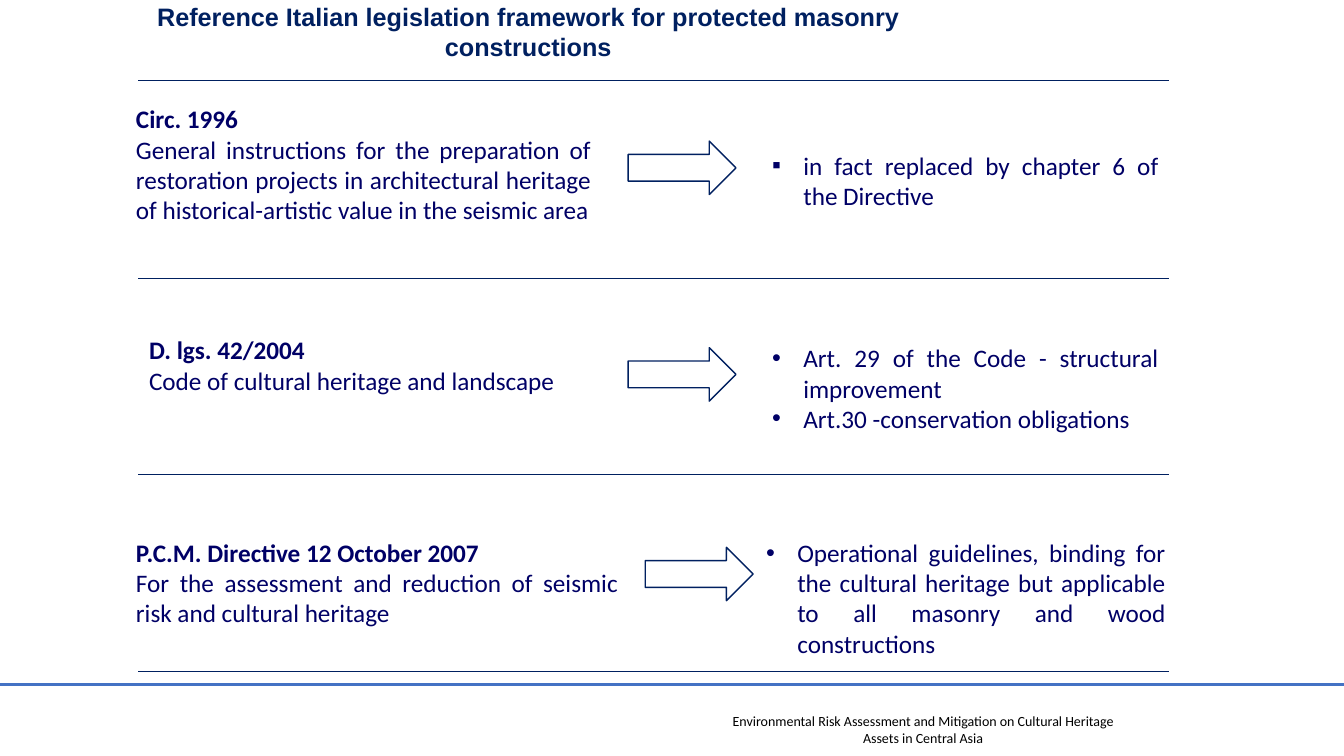
from lxml.etree import SubElement
from pptx import Presentation
from pptx.dml.color import RGBColor
from pptx.enum.shapes import MSO_CONNECTOR, MSO_SHAPE
from pptx.enum.text import MSO_ANCHOR, MSO_AUTO_SIZE, PP_ALIGN
from pptx.oxml.ns import qn
from pptx.util import Inches, Pt

COLORS = {"white": "FFFFFF", "navy": "002060", "body": "000066",
          "footer_rule": "4472C4", "black": "000000"}
COLORS = {name: RGBColor.from_string(value) for name, value in COLORS.items()}
BODY = {"name": "Calibri", "size": Pt(18), "bold": False}


def write(frame, lines, align, color, font_format, bullet=None, bold_first=False):
    frame.word_wrap = True
    for index, line in enumerate(lines):
        paragraph = frame.paragraphs[0] if index == 0 else frame.add_paragraph()
        paragraph.alignment = align
        if bullet:
            properties = paragraph._p.get_or_add_pPr()
            properties.set("marL", str(Inches(0.31)))
            properties.set("indent", str(-Inches(0.31)))
            SubElement(properties, qn("a:buFont"), typeface="Arial")
            SubElement(properties, qn("a:buChar"), char=bullet)
        run = paragraph.add_run()
        run.text = line
        for attribute, value in font_format.items():
            setattr(run.font, attribute, value)
        run.font.color.rgb = color
        if bold_first and index == 0:
            run.font.bold = True


def add_rule(left, right, y, color, weight):
    rule = slide.shapes.add_connector(
        MSO_CONNECTOR.STRAIGHT, Inches(left), Inches(y), Inches(right), Inches(y))
    rule.line.color.rgb = color
    rule.line.width = Pt(weight)
    SubElement(rule._element.spPr, qn("a:effectLst"))


deck = Presentation()
deck.slide_width = Inches(13.33)
deck.slide_height = Inches(7.5)
slide = deck.slides.add_slide(deck.slide_layouts[5])

heading = slide.shapes.title
heading_place = {"left": 1.25, "top": -0.01, "width": 7.98, "height": 0.65}
for attribute, value in heading_place.items():
    setattr(heading, attribute, Inches(value))
heading.fill.solid()
heading.fill.fore_color.rgb = COLORS["white"]
heading.line.color.rgb = COLORS["white"]
heading.line.width = Pt(1)
heading.text_frame.auto_size = MSO_AUTO_SIZE.NONE
heading.text_frame.vertical_anchor = MSO_ANCHOR.MIDDLE
write(heading.text_frame,
      ["Reference Italian legislation framework for protected masonry constructions"],
      PP_ALIGN.CENTER, COLORS["navy"], {"name": "Arial", "size": Pt(18), "bold": True})

add_rule(0, 13.33, 6.79, COLORS["footer_rule"], 2.25)
for y in (0.8, 2.76, 4.71, 6.66):
    add_rule(1.37, 11.59, y, COLORS["navy"], 0.5)

for left, top in ((6.23, 1.4), (6.23, 3.45), (6.4, 5.43)):
    arrow = slide.shapes.add_shape(
        MSO_SHAPE.RIGHT_ARROW, Inches(left), Inches(top), Inches(1.07), Inches(0.53))
    arrow.shadow.inherit = False
    arrow.fill.solid()
    arrow.fill.fore_color.rgb = COLORS["white"]
    arrow.line.color.rgb = COLORS["navy"]
    arrow.line.width = Pt(1)

passages = [
    ((1.25, 0.98, 4.71, 1.31), None,
     ["Circ. 1996",
      "General instructions for the preparation of restoration projects in "
      "architectural heritage of historical-artistic value in the seismic area"]),
    ((7.56, 1.44, 4.03, 0.71), "▪",
     ["in fact replaced by chapter 6 of the Directive"]),
    ((1.38, 3.27, 5.51, 0.71), None,
     ["D. lgs. 42/2004", "Code of cultural heritage and landscape"]),
    ((7.56, 3.35, 4.03, 1.01), "•",
     ["Art. 29 of the Code - structural improvement",
      "Art.30 -conservation obligations"]),
    ((1.25, 5.28, 4.98, 1.01), None,
     ["P.C.M. Directive 12 October 2007",
      "For the assessment and reduction of seismic risk and cultural heritage"]),
    ((7.5, 5.28, 4.16, 1.31), "•",
     ["Operational guidelines, binding for the cultural heritage but applicable "
      "to all masonry and wood constructions"]),
]
for place, bullet, lines in passages:
    passage = slide.shapes.add_textbox(*map(Inches, place))
    write(passage.text_frame, lines, PP_ALIGN.JUSTIFY, COLORS["body"], BODY,
          bullet, bold_first=bullet is None)

footer = slide.shapes.add_textbox(Inches(7.02), Inches(7.02), Inches(4.27), Inches(0.44))
write(footer.text_frame,
      ["Environmental Risk Assessment and Mitigation on Cultural Heritage "
       "Assets in Central Asia"],
      PP_ALIGN.CENTER, COLORS["black"], {"name": "Calibri", "size": Pt(10)})

deck.save("out.pptx")
